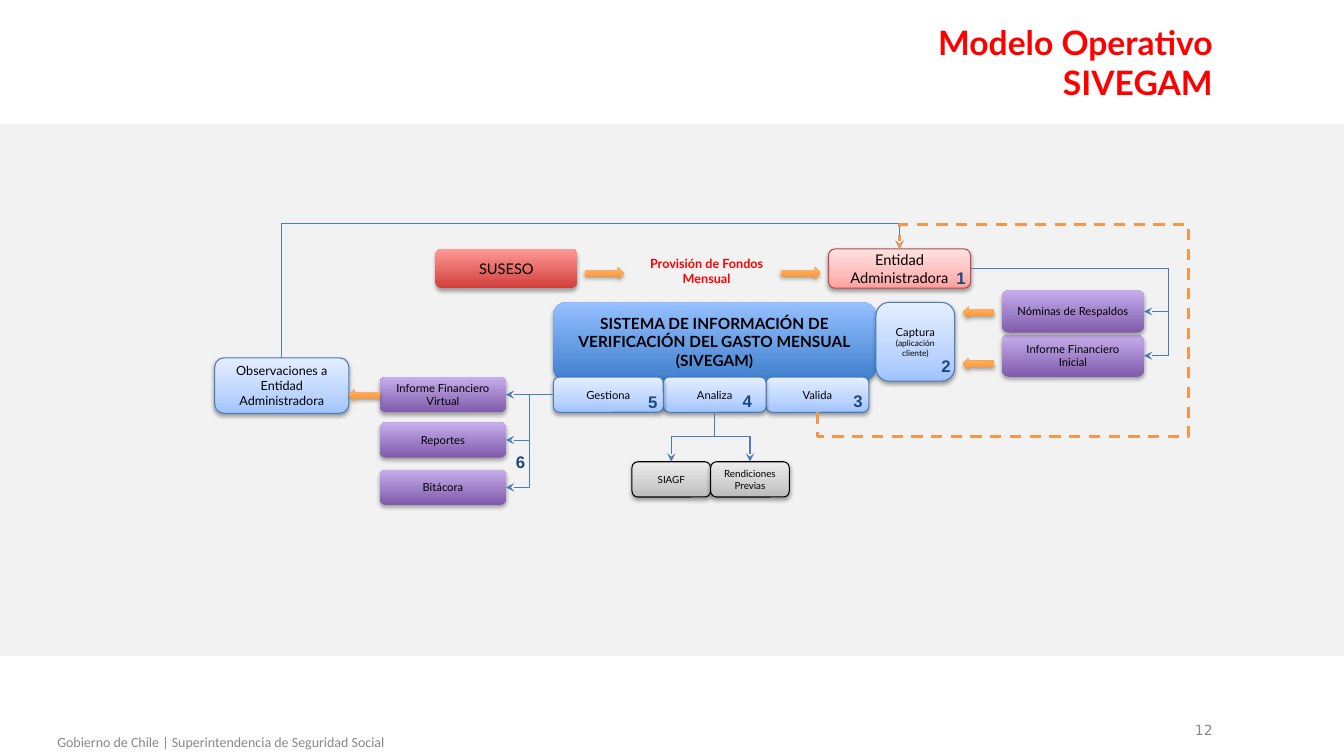
import pptx
import pptx.util
import pptx.dml.color
import pptx.enum.dml
import pptx.enum.shapes
import pptx.enum.text
import pptx.oxml
import pptx.oxml.ns

Pt = pptx.util.Pt
qn = pptx.oxml.ns.qn
SHAPE = pptx.enum.shapes.MSO_SHAPE
ALIGN = pptx.enum.text.PP_ALIGN
ANCHOR = pptx.enum.text.MSO_ANCHOR

COLORS = {
    "panel": "F2F2F2", "title": "FF0000", "text": "000000", "number": "1F497D",
    "footer": "898989", "blue_line": "4A7DBA", "red_line": "BD4B48",
    "orange_line": "F79646", "shadow": "000000",
}
GRADIENTS = {
    "red": [(0, "D13F3B"), (100, "FF9995")],
    "blue": [(0, "3E7FCD"), (100, "96C0FF")],
    "purple": [(0, "7F5AAB"), (100, "C7AEED")],
    "orange": [(0, "FF932B"), (100, "FFB673")],
    "pale_red": [(0, "FFA09D"), (35, "FFBCBC"), (100, "FFE2E2")],
    "pale_blue": [(0, "9FC3FF"), (35, "BDD5FF"), (100, "E4EEFF")],
    "gray": [(0, "BABABA"), (35, "CFCFCF"), (100, "EDEDED")],
}
# Outline of the gradients that have one
OUTLINES = {"pale_red": "red_line", "pale_blue": "blue_line", "gray": "text"}


def rgb(name):
    return pptx.dml.color.RGBColor.from_string(COLORS[name])


def add_xml(parent, tag, **attributes):
    child = parent.makeelement(qn(tag), {key: str(value) for key, value in attributes.items()})
    parent.append(child)
    return child


def write_text(shape, paragraphs, size=8, font="Lato", color="text", bold=False,
               align=ALIGN.CENTER, anchor=ANCHOR.MIDDLE):
    """Each paragraph is a string or a list of (text, size) runs."""
    frame = shape.text_frame
    frame.word_wrap = True
    frame.vertical_anchor = anchor
    for index, content in enumerate(paragraphs):
        paragraph = frame.paragraphs[0] if index == 0 else frame.add_paragraph()
        paragraph.alignment = align
        runs = [(content, size)] if isinstance(content, str) else content
        for text, run_size in runs:
            run = paragraph.add_run()
            run.text = text
            run.font.size = Pt(run_size)
            run.font.name = font
            run.font.bold = bold
            run.font.color.rgb = rgb(color)


def add_label(slide, left, top, width, height, paragraphs, **text_format):
    label = slide.shapes.add_textbox(Pt(left), Pt(top), Pt(width), Pt(height))
    write_text(label, paragraphs, **text_format)


def add_shadow(shape, alpha, blur, distance):
    effects = shape.element.spPr.find(qn("a:effectLst"))
    shadow = add_xml(effects, "a:outerShdw", blurRad=Pt(blur), dist=Pt(distance),
                     dir=90 * 60000, algn="ctr", rotWithShape=0)
    add_xml(add_xml(shadow, "a:srgbClr", val=COLORS["shadow"]), "a:alpha", val=alpha * 1000)


def add_gradient(slide, kind, left, top, width, height, gradient):
    shape = slide.shapes.add_shape(kind, Pt(left), Pt(top), Pt(width), Pt(height))
    shape.shadow.inherit = False
    shape.fill.gradient()
    shape.fill.gradient_angle = 90
    stops = shape.element.spPr.find(qn("a:gradFill")).find(qn("a:gsLst"))
    for stop in list(stops):
        stops.remove(stop)
    for position, color in GRADIENTS[gradient]:
        add_xml(add_xml(stops, "a:gs", pos=position * 1000), "a:srgbClr", val=color)
    if gradient in OUTLINES:
        shape.line.color.rgb = rgb(OUTLINES[gradient])
        shape.line.width = Pt(0.75)
        add_shadow(shape, 37, 3.1, 1.6)
    else:
        shape.line.fill.background()
        add_shadow(shape, 35, 3.1, 1.8)
    return shape


def add_elbow(slide, start, end, bends, vertical=False, color="blue_line", width=0.75, dash=False):
    """Elbow arrow; a vertical one leaves its start upwards or downwards."""
    (x1, y1), (x2, y2) = start, end
    turn = 0
    if vertical:
        # Unrotated frame around the same centre
        turn = 270 if x2 > x1 else 90
        sign = -1 if turn == 270 else 1
        middle_x, middle_y = (x1 + x2) / 2, (y1 + y2) / 2
        half_x, half_y = sign * (y2 - y1) / 2, sign * (x1 - x2) / 2
        x1, x2 = middle_x - half_x, middle_x + half_x
        y1, y2 = middle_y - half_y, middle_y + half_y
    connector = slide.shapes.add_connector(
        pptx.enum.shapes.MSO_CONNECTOR.ELBOW, Pt(x1), Pt(y1), Pt(x2), Pt(y2))
    properties = connector.element.spPr
    if turn:
        properties.find(qn("a:xfrm")).set("rot", str(turn * 60000))
    geometry = properties.find(qn("a:prstGeom"))
    geometry.set("prst", f"bentConnector{len(bends) + 2}")
    guides = geometry.find(qn("a:avLst"))
    if guides is None:
        guides = add_xml(geometry, "a:avLst")
    for index, bend in enumerate(bends, 1):
        add_xml(guides, "a:gd", name=f"adj{index}", fmla=f"val {round(bend * 100000)}")
    connector.line.color.rgb = rgb(color)
    connector.line.width = Pt(width)
    if dash:
        connector.line.dash_style = pptx.enum.dml.MSO_LINE.DASH
    add_xml(properties.find(qn("a:ln")), "a:tailEnd", type="stealth")
    add_xml(properties, "a:effectLst")


def add_header(slide, left, top):
    add_label(slide, left + 15.8, top + 12.2, 857.5, 85.7, ["Modelo Operativo", "SIVEGAM"],
              size=24, color="title", bold=True, align=ALIGN.RIGHT, anchor=ANCHOR.TOP)


def add_footer(slide, left, top):
    footer_format = dict(size=10, color="footer", align=ALIGN.RIGHT)
    add_label(slide, left + 649.4, top + 10.1, 223.9, 15.1, ["12"],
              font="DejaVu Sans", **footer_format)
    add_label(slide, left - 8.6, top + 13, 290.2, 25.9,
              ["Gobierno de Chile | Superintendencia de Seguridad Social"],
              font="Calibri", **footer_format)


def add_diagram(slide, left, top, width, height):
    # Background panel
    panel = slide.shapes.add_shape(SHAPE.PENTAGON, Pt(left), Pt(top), Pt(width), Pt(height))
    panel.adjustments[0] = 0
    panel.shadow.inherit = False
    panel.fill.solid()
    panel.fill.fore_color.rgb = rgb("panel")
    panel.line.fill.background()

    # Boxes: x, y, width, height, gradient, paragraphs, text format
    boxes = [
        (311, 89.3, 101.5, 28.1, "red", ["SUSESO"], dict(size=10.5)),
        (395.3, 127.5, 230.4, 56.2, "blue",
         ["SISTEMA DE INFORMACIÓN DE VERIFICACIÓN DEL GASTO MENSUAL", "(SIVEGAM)"],
         dict(size=11, bold=True)),
        (591.8, 89.3, 101.5, 28.1, "pale_red", ["Entidad", "Administradora"], dict(size=10.5)),
        (547.2, 180.8, 73.4, 25.2, "pale_blue", ["Valida"], {}),
        (153.4, 167.1, 95.8, 39.6, "pale_blue",
         ["Observaciones a Entidad Administradora"], dict(size=9)),
        (451.4, 241.3, 56.2, 25.2, "gray", ["SIAGF"], dict(size=7)),
        (715.7, 150.5, 101.5, 30.2, "purple", ["Informe Financiero Inicial"], {}),
        (625.7, 127.5, 56.2, 56.2, "pale_blue",
         [[("Captura ", 8), ("(aplicación cliente)", 6)]], {}),
        (473.8, 180.8, 73.4, 25.2, "pale_blue", ["Analiza"], {}),
        (395.3, 180.8, 78.5, 25.2, "pale_blue", ["Gestiona"], {}),
        (507.6, 241.3, 56.2, 25.2, "gray", ["Rendiciones Previas"], dict(size=7)),
        (715.7, 118.9, 101.5, 30.2, "purple", ["Nóminas de Respaldos"], {}),
        (271.4, 180.8, 90, 25.2, "purple", ["Informe Financiero Virtual"], {}),
        (271.4, 247, 90, 25.2, "purple", ["Bitácora"], {}),
        (271.4, 213.2, 90, 25.2, "purple", ["Reportes"], {}),
    ]
    for x, y, box_width, box_height, gradient, paragraphs, text_format in boxes:
        box = add_gradient(slide, SHAPE.ROUNDED_RECTANGLE, left + x, top + y,
                           box_width, box_height, gradient)
        write_text(box, paragraphs, **text_format)
    add_label(slide, left + 445.7, top + 90.8, 118.1, 28.8, ["Provisión de Fondos Mensual"],
              size=9, color="title", bold=True, anchor=ANCHOR.TOP)

    # Block arrows
    for kind, x, y, arrow_width in [
            (SHAPE.RIGHT_ARROW, 417.6, 102.3, 28.1), (SHAPE.RIGHT_ARROW, 558, 102.3, 28.1),
            (SHAPE.LEFT_ARROW, 249.1, 189.4, 22.3), (SHAPE.LEFT_ARROW, 687.6, 130.4, 22.3),
            (SHAPE.LEFT_ARROW, 687.6, 167.1, 22.3)]:
        add_gradient(slide, kind, left + x, top + y, arrow_width, 8.6, "orange")

    # Elbow arrows
    def point(x, y):
        return left + x, top + y

    entity_top = point(642.5, 89.3)
    for y in (134, 165.6):
        add_elbow(slide, point(693.3, 103.4), point(817.2, y), [1.14])
    add_elbow(slide, point(201.3, 167.1), entity_top, [1.23], vertical=True)
    for x in (535.7, 479.5):
        add_elbow(slide, point(510.5, 206), point(x, 241.3), [0.5], vertical=True)
    for y in (193.4, 225.8, 259.6):
        add_elbow(slide, point(395.3, 193.4), point(361.4, y), [0.5])
    add_elbow(slide, point(583.9, 206), entity_top, [-0.15, 4.52, 1.15], vertical=True,
              color="orange_line", width=2, dash=True)

    # Step numbers
    steps = [(676.1, 99.4), (665.3, 162.1), (602.6, 187.3),
             (523.4, 187.3), (455.8, 188), (361.4, 230.5)]
    for number, (x, y) in enumerate(steps, 1):
        add_label(slide, left + x, top + y, 23.8, 21.6, [str(number)], size=12, font="Arial",
                  color="number", bold=True, align=ALIGN.LEFT, anchor=ANCHOR.TOP)


def main():
    presentation = pptx.Presentation()
    presentation.slide_width, presentation.slide_height = Pt(960), Pt(540)
    slide = presentation.slides.add_slide(presentation.slide_layouts[6])
    add_diagram(slide, 0, 88.5, 960, 380)
    add_header(slide, 0, 0)
    add_footer(slide, 0, 504)
    presentation.save("out.pptx")


if __name__ == "__main__":
    main()
